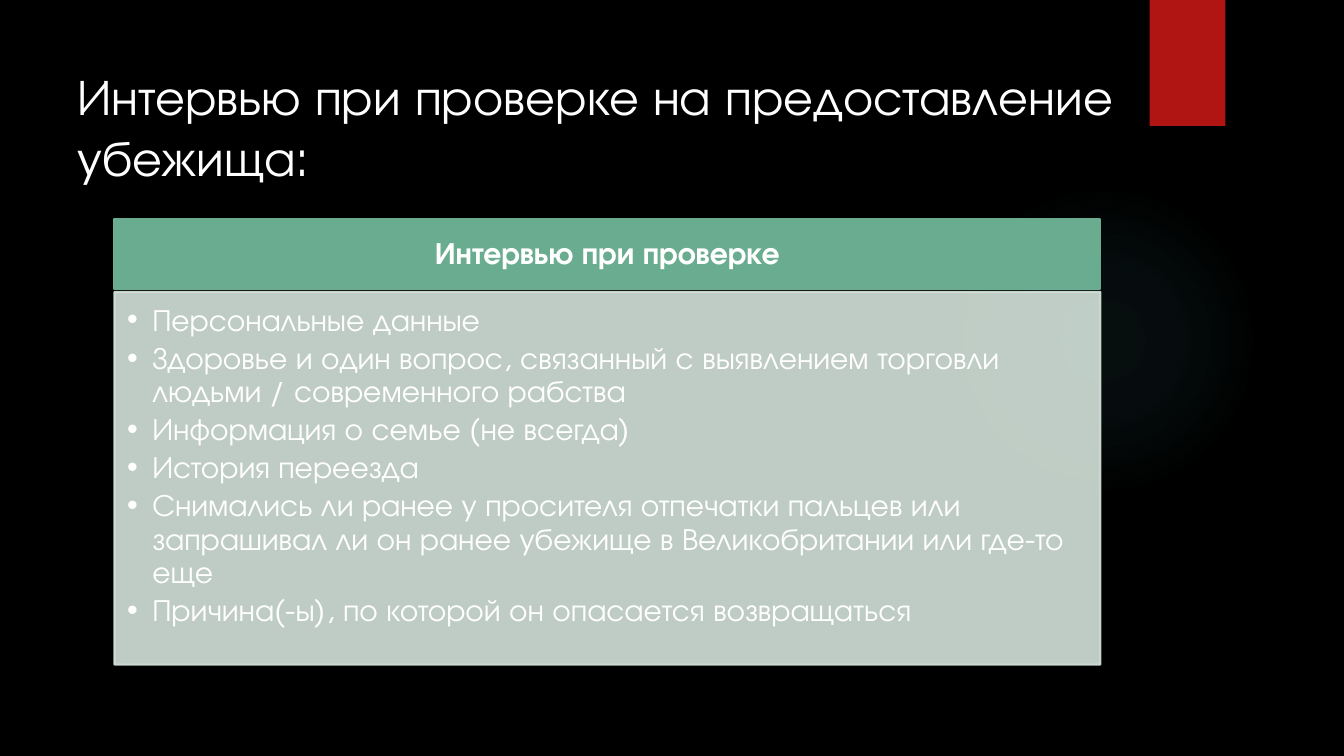
from lxml import etree
from pptx import Presentation
from pptx import util as u
from pptx.dml.color import RGBColor
from pptx.enum import shapes, text
from pptx.oxml import ns

HUES = {"back": "000000", "glow": "50B9C1", "flag": "B01513",
        "head": "6AAC90", "panel": "D4E3DB", "text": "FFFFFF"}
FACE = "TeX Gyre Adventor"
SCALE = 9525  # EMU in one px, 96 px to the inch


def px(size):
    return u.Emu(size * SCALE)


def hue(name):
    return RGBColor.from_string(HUES[name])


def sub(node, tag, **attrs):
    return etree.SubElement(node, ns.qn(tag), {k: str(v) for k, v in attrs.items()})


class Deck:
    def __init__(self):
        self.prs = Presentation()
        self.prs.slide_width, self.prs.slide_height = px(1280), px(720)
        self.slide = self.prs.slides.add_slide(self.prs.slide_layouts[1])
        fill = self.slide.background.fill
        fill.solid()
        fill.fore_color.rgb = hue("back")

    def paint(self, shape, name, edge=0, alpha=100):
        shape.fill.solid()
        shape.fill.fore_color.rgb = hue(name)
        if edge:
            shape.line.color.rgb = hue(name)
            shape.line.width = u.Pt(edge)
        else:
            shape.line.fill.background()
        if alpha < 100:
            for tint in shape.element.spPr.iter(ns.qn("a:srgbClr")):
                sub(tint, "a:alpha", val=alpha * 1000)

    def shape(self, kind, box):
        shape = self.slide.shapes.add_shape(kind, *map(px, box))
        shape.shadow.inherit = False
        return shape

    def rect(self, box, name, edge=0):
        rect = self.shape(shapes.MSO_SHAPE.RECTANGLE, box)
        self.paint(rect, name, edge)
        return rect

    def glow(self, box, name, stops):
        disc = self.shape(shapes.MSO_SHAPE.OVAL, box)
        disc.line.fill.background()
        disc.fill.background()
        grad = etree.Element(ns.qn("a:gradFill"), rotWithShape="1")
        steps = sub(grad, "a:gsLst")
        for pos, alpha in stops:
            stop = sub(steps, "a:gs", pos=pos * 1000)
            tint = sub(stop, "a:srgbClr", val=HUES[name])
            sub(tint, "a:alpha", val=alpha * 1000)
        way = sub(grad, "a:path", path="circle")
        sub(way, "a:fillToRect", l=50000, t=50000, r=50000, b=50000)
        props = disc.element.spPr
        props.replace(props.find(ns.qn("a:noFill")), grad)

    def shade(self, shape):
        effect = shape.element.spPr.find(ns.qn("a:effectLst"))
        drop = sub(effect, "a:outerShdw", blurRad=u.Pt(3), dist=u.Pt(2),
                   dir=5400000, rotWithShape=0)
        sub(sub(drop, "a:srgbClr", val="000000"), "a:alpha", val=45000)

    def holder(self, index, box):
        """Move a placeholder into its box, in front of what is drawn so far."""
        item = self.slide.placeholders[index]
        item.left, item.top, item.width, item.height = map(px, box)
        self.slide.shapes.element.append(item.element)
        return item

    def label(self, shape, words, size, anchor, pads, bold=False,
              align=text.PP_ALIGN.LEFT, lead=1.0, after=0):
        frame = shape.text_frame
        frame.text = words
        frame.word_wrap = True
        frame.auto_size = text.MSO_AUTO_SIZE.NONE
        frame.vertical_anchor = anchor
        (frame.margin_left, frame.margin_top,
         frame.margin_right, frame.margin_bottom) = map(px, pads)
        for para in frame.paragraphs:
            para.alignment, para.line_spacing = align, lead
            para.space_before, para.space_after = u.Pt(0), u.Pt(after)
            for run in para.runs:
                run.font.name, run.font.size = FACE, u.Pt(size)
                run.font.bold = bold
                run.font.color.rgb = hue("text")

    def bullets(self, shape, indent):
        for para in shape.text_frame.paragraphs:
            props = para._p.get_or_add_pPr()
            props.set("marL", str(px(indent)))
            props.set("indent", str(px(-indent)))
            sub(props, "a:buChar", char="•")


def main():
    deck = Deck()
    anchor = text.MSO_ANCHOR

    # Backdrop
    deck.glow((903, 176, 296, 296), "glow", [(0, 7), (36, 6), (69, 0)])
    deck.shade(deck.rect((1095, 0, 72, 120), "flag"))

    # Panel heading
    head = deck.rect((109, 209, 939, 66), "head", 1.5)
    deck.label(head, "Интервью при проверке", 22, anchor.MIDDLE, (16, 10, 16, 10),
               bold=True, align=text.PP_ALIGN.CENTER, lead=0.9)

    # Panel list
    points = [
        "Персональные данные",
        "Здоровье и один вопрос, связанный с выявлением торговли людьми / современного рабства",
        "Информация о семье (не всегда)",
        "История переезда",
        "Снимались ли ранее у просителя отпечатки пальцев или запрашивал ли он ранее "
        "убежище в Великобритании или где-то еще",
        "Причина(-ы), по которой он опасается возвращаться",
    ]
    panel = deck.holder(1, (109, 278, 939, 355))
    deck.paint(panel, "panel", 1.5, alpha=90)
    deck.label(panel, "\n".join(points), 22, anchor.TOP, (12, 12, 16, 18),
               lead=0.9, after=3.5)
    deck.bullets(panel, 24)

    # Title
    title = deck.holder(0, (64, 57, 1038, 126))
    deck.label(title, "Интервью при проверке на предоставление убежища:", 36,
               anchor.MIDDLE, (10, 5, 10, 5))

    deck.prs.save("out.pptx")


if __name__ == "__main__":
    main()
